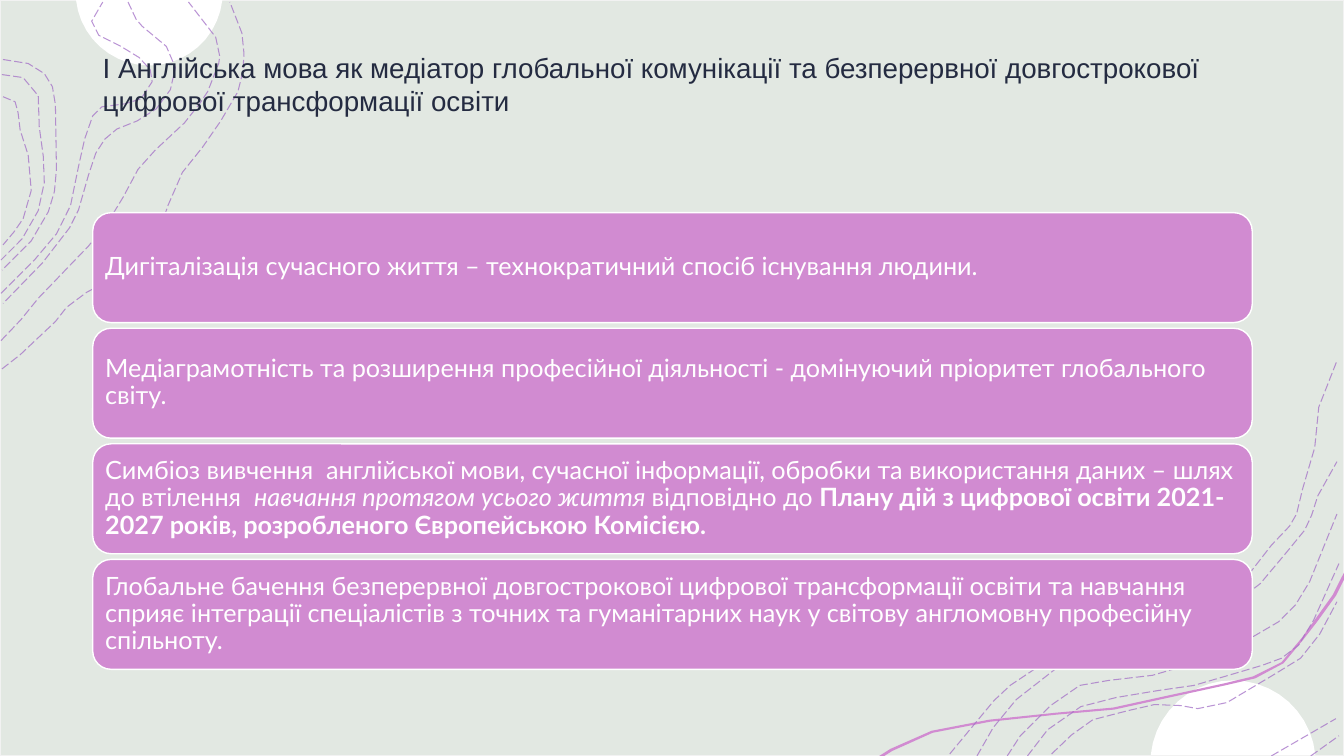
from dataclasses import dataclass
from math import asin, cos, pi, sin

from lxml.etree import SubElement
from pptx import Presentation
from pptx.dml.color import RGBColor
from pptx.enum.dml import MSO_LINE
from pptx.enum.shapes import MSO_SHAPE
from pptx.enum.text import MSO_ANCHOR, PP_ALIGN
from pptx.oxml.ns import qn
from pptx.util import Inches, Pt


@dataclass(frozen=True)
class Theme:
    background: RGBColor = RGBColor.from_string("E2E8E2")
    border: RGBColor = RGBColor.from_string("F2F2F2")
    white: RGBColor = RGBColor.from_string("FFFFFF")
    orchid: RGBColor = RGBColor.from_string("D18BD1")
    contour: RGBColor = RGBColor.from_string("A471C7")
    ink: RGBColor = RGBColor.from_string("242B41")
    title_font: str = "Arial"
    card_font: str = "Lato"
    title_size: float = 19.8
    card_size: float = 18


WIDTH, HEIGHT = 13.33, 7.5
MARGIN, CONTENT_WIDTH = 0.92, 11.5
CARD_HEIGHT, FIRST_CARD_TOP, LAST_CARD_TOP = 1.09, 2.11, 5.55

TITLE = (
    "I Англійська мова як медіатор глобальної комунікації та безперервної "
    "довгострокової цифрової трансформації освіти"
)
CARDS = [
    [("Дигіталізація сучасного життя – технократичний спосіб існування людини.", "")],
    [("Медіаграмотність та розширення професійної діяльності - домінуючий "
      "пріоритет глобального світу.", "")],
    [("Симбіоз вивчення  англійської мови, сучасної інформації, обробки та "
      "використання даних – шлях до втілення  ", ""),
     ("навчання протягом усього життя ", "italic"),
     ("відповідно до ", ""),
     ("Плану дій з цифрової освіти 2021-2027 років, розробленого "
      "Європейською Комісією.", "bold")],
    [("Глобальне бачення безперервної довгострокової цифрової трансформації "
      "освіти та навчання сприяє інтеграції спеціалістів з точних та "
      "гуманітарних наук у світову англомовну професійну спільноту.", "")],
]

RIBBON = [
    (13.33, 5.75), (13.25, 5.91), (13.07, 6.16), (12.93, 6.34), (12.73, 6.58),
    (12.45, 6.73), (12.15, 6.8), (11.55, 6.93), (11.05, 7.04), (10.48, 7.09),
    (9.82, 7.16), (9.25, 7.27), (8.85, 7.45), (8.77, 7.5),
    (8.72, 7.5), (8.83, 7.43), (9.24, 7.25), (9.81, 7.14), (10.48, 7.07),
    (11.04, 7.02), (11.54, 6.91), (12.14, 6.78), (12.43, 6.71), (12.71, 6.57),
    (12.91, 6.33), (13.04, 6.15), (13.22, 5.9), (13.31, 5.72), (13.33, 5.68),
]
TOP_LEFT_CONTOURS = [
    [(0.02, 3.66), (0.2, 3.52), (0.55, 3.19), (0.66, 3.05), (0.86, 2.9),
     (1.11, 2.77), (1.27, 2.69), (1.41, 2.54), (1.6, 2.23), (1.67, 2.03),
     (1.81, 1.71), (2.01, 1.46), (2.19, 1.2), (2.36, 0.91), (2.41, 0.71),
     (2.42, 0.53), (2.4, 0.33), (2.28, 0.02)],
    [(0.01, 3.38), (0.21, 3.17), (0.38, 2.96), (0.88, 2.44), (1.08, 2.19),
     (1.22, 1.96), (1.37, 1.68), (1.54, 1.49), (1.83, 1.22), (1.98, 1.03),
     (2.06, 0.91), (2.17, 0.63), (2.18, 0.56), (2.14, 0.37), (1.87, 0.02)],
    [(1.27, 0.02), (1.35, 0.19), (1.41, 0.26), (1.65, 0.46), (1.74, 0.67),
     (1.69, 0.89), (1.55, 1.08), (1.36, 1.2), (1.16, 1.28), (1.04, 1.38),
     (0.95, 1.52), (0.88, 1.73), (0.78, 2.08), (0.69, 2.26), (0.42, 2.61),
     (0.03, 3.01)],
    [(0.01, 2.91), (0.35, 2.57), (0.56, 2.32), (0.7, 2.04), (0.78, 1.65),
     (0.84, 1.38), (0.92, 1.15), (1.01, 1.06), (1.24, 1.03), (1.4, 0.98),
     (1.51, 0.81), (1.49, 0.69), (1.38, 0.57), (1.2, 0.46), (0.98, 0.35),
     (0.91, 0.21), (1.02, 0.02)],
    [(0.03, 0.59), (0.28, 0.63), (0.44, 0.73), (0.52, 0.86), (0.55, 1.04),
     (0.56, 1.68), (0.54, 1.9), (0.48, 2.1), (0.31, 2.39), (0.02, 2.68)],
    [(0.02, 0.74), (0.23, 0.77), (0.38, 0.95), (0.39, 1.26), (0.43, 1.55),
     (0.44, 1.81), (0.38, 2.09), (0.22, 2.37), (0.01, 2.58)],
    [(0.03, 0.96), (0.15, 1.01), (0.18, 1.12), (0.2, 1.29), (0.28, 1.54),
     (0.31, 1.89), (0.23, 2.17), (0.14, 2.3), (0.03, 2.43)],
]
BOTTOM_RIGHT_CONTOURS = [
    [(9.42, 7.48), (9.71, 7.13), (9.86, 6.95), (10.02, 6.8), (10.32, 6.6),
     (10.56, 6.43), (10.78, 6.3), (10.98, 6.25), (11.26, 6.29), (11.37, 6.29),
     (11.55, 6.19), (11.73, 6.06), (12, 5.96), (12.24, 5.85), (12.4, 5.68),
     (12.61, 5.41), (12.79, 5.22), (12.86, 5.1), (12.92, 4.85), (13.04, 4.44),
     (13.08, 4.04), (13.26, 3.58)],
    [(9.69, 7.5), (9.85, 7.22), (10.08, 6.94), (10.49, 6.62), (10.75, 6.45),
     (11.03, 6.38), (11.22, 6.41), (11.45, 6.41), (11.64, 6.33), (11.95, 6.1),
     (12.18, 6), (12.33, 5.92), (12.5, 5.79), (12.76, 5.48), (12.94, 5.26),
     (13.01, 5.11), (13.07, 4.92), (13.26, 4.58)],
    [(13, 7.5), (13.28, 7.3)],
    [(12.61, 7.5), (13.25, 7.13)],
    [(10.43, 7.48), (10.63, 7.29), (10.84, 7.14), (11.19, 7.05), (11.45, 6.99),
     (11.71, 7), (11.88, 7.03), (12.17, 6.97), (12.64, 6.69), (12.9, 6.53),
     (13.09, 6.29), (13.26, 5.97)],
    [(10.19, 7.5), (10.39, 7.24), (10.72, 7.01), (11.07, 6.92), (11.49, 6.85),
     (11.84, 6.8), (12.15, 6.71), (12.52, 6.6), (12.71, 6.53), (12.88, 6.4),
     (13.03, 6.15), (13.28, 5.59)],
    [(9.99, 7.5), (10.12, 7.3), (10.42, 7), (10.71, 6.8), (11, 6.75),
     (11.43, 6.7), (11.84, 6.58), (12.16, 6.43), (12.44, 6.31), (12.68, 6.17),
     (12.85, 6), (12.99, 5.77), (13.26, 5.1)],
]


def circle_cap(center_x, center_y, radius, edge, steps=20):
    start = asin((edge - center_y) / radius)
    direction = 1 if center_y < edge else -1
    sweep = direction * (pi - 2 * abs(start))
    angles = [start + sweep * step / steps for step in range(steps + 1)]
    return [(center_x + radius * cos(angle), center_y + radius * sin(angle))
            for angle in angles]


class SlideBuilder:
    def __init__(self, slide, theme):
        self.slide = slide
        self.theme = theme

    def panel(self, kind, left, top, width, height, fill, line):
        shape = self.slide.shapes.add_shape(
            kind, Inches(left), Inches(top), Inches(width), Inches(height))
        shape.shadow.inherit = False
        shape.fill.solid()
        shape.fill.fore_color.rgb = fill
        shape.line.color.rgb = line
        shape.line.width = Pt(1)
        return shape

    def outline(self, points, close):
        vertices = [(Inches(x), Inches(y)) for x, y in points]
        builder = self.slide.shapes.build_freeform(*vertices[0])
        builder.add_line_segments(vertices[1:], close=close)
        shape = builder.convert_to_shape()
        shape.shadow.inherit = False
        return shape

    def filled_outline(self, points, color):
        shape = self.outline(points, close=True)
        shape.fill.solid()
        shape.fill.fore_color.rgb = color
        shape.line.fill.background()

    def contour(self, points):
        shape = self.outline(points, close=False)
        shape.fill.background()
        shape.line.color.rgb = self.theme.contour
        shape.line.width = Pt(0.75)
        shape.line.dash_style = MSO_LINE.LONG_DASH
        color = shape.element.spPr.find(qn("a:ln")).find(".//" + qn("a:srgbClr"))
        SubElement(color, qn("a:alpha"), val="75000")

    def title(self, text):
        box = self.slide.shapes.add_textbox(
            Inches(MARGIN), Inches(0.4), Inches(CONTENT_WIDTH), Inches(1.45))
        frame = box.text_frame
        frame.word_wrap = True
        frame.margin_top = Inches(0.1)
        paragraph = frame.paragraphs[0]
        paragraph.text = text
        self.style(paragraph, self.theme.title_font, self.theme.title_size, self.theme.ink)

    def card(self, top, runs):
        shape = self.panel(MSO_SHAPE.ROUNDED_RECTANGLE, MARGIN, top, CONTENT_WIDTH,
                           CARD_HEIGHT, self.theme.orchid, self.theme.white)
        frame = shape.text_frame
        frame.word_wrap = True
        frame.vertical_anchor = MSO_ANCHOR.MIDDLE
        frame.margin_left = frame.margin_right = Inches(0.07)
        frame.margin_top = frame.margin_bottom = Inches(0.07)
        paragraph = frame.paragraphs[0]
        paragraph.alignment = PP_ALIGN.LEFT
        paragraph.line_spacing = 0.9
        self.style(paragraph, self.theme.card_font, self.theme.card_size, self.theme.white)
        for text, emphasis in runs:
            run = paragraph.add_run()
            run.text = text
            run.font.italic = emphasis == "italic" or None
            run.font.bold = emphasis == "bold" or None

    def style(self, paragraph, font, size, color):
        paragraph.font.name = font
        paragraph.font.size = Pt(size)
        paragraph.font.color.rgb = color


def main():
    presentation = Presentation()
    presentation.slide_width = Inches(WIDTH)
    presentation.slide_height = Inches(HEIGHT)
    theme = Theme()
    builder = SlideBuilder(
        presentation.slides.add_slide(presentation.slide_layouts[6]), theme)

    builder.panel(MSO_SHAPE.RECTANGLE, 0, 0, WIDTH, HEIGHT, theme.background, theme.border)
    builder.filled_outline(circle_cap(1.48, -0.08, 0.73, 0), theme.white)
    builder.filled_outline(circle_cap(12.23, 7.57, 0.82, 7.49), theme.white)
    builder.filled_outline(RIBBON, theme.orchid)
    for points in TOP_LEFT_CONTOURS + BOTTOM_RIGHT_CONTOURS:
        builder.contour(points)

    builder.title(TITLE)
    pitch = (LAST_CARD_TOP - FIRST_CARD_TOP) / (len(CARDS) - 1)
    for index, runs in enumerate(CARDS):
        builder.card(FIRST_CARD_TOP + index * pitch, runs)
    presentation.save("out.pptx")


if __name__ == "__main__":
    main()
